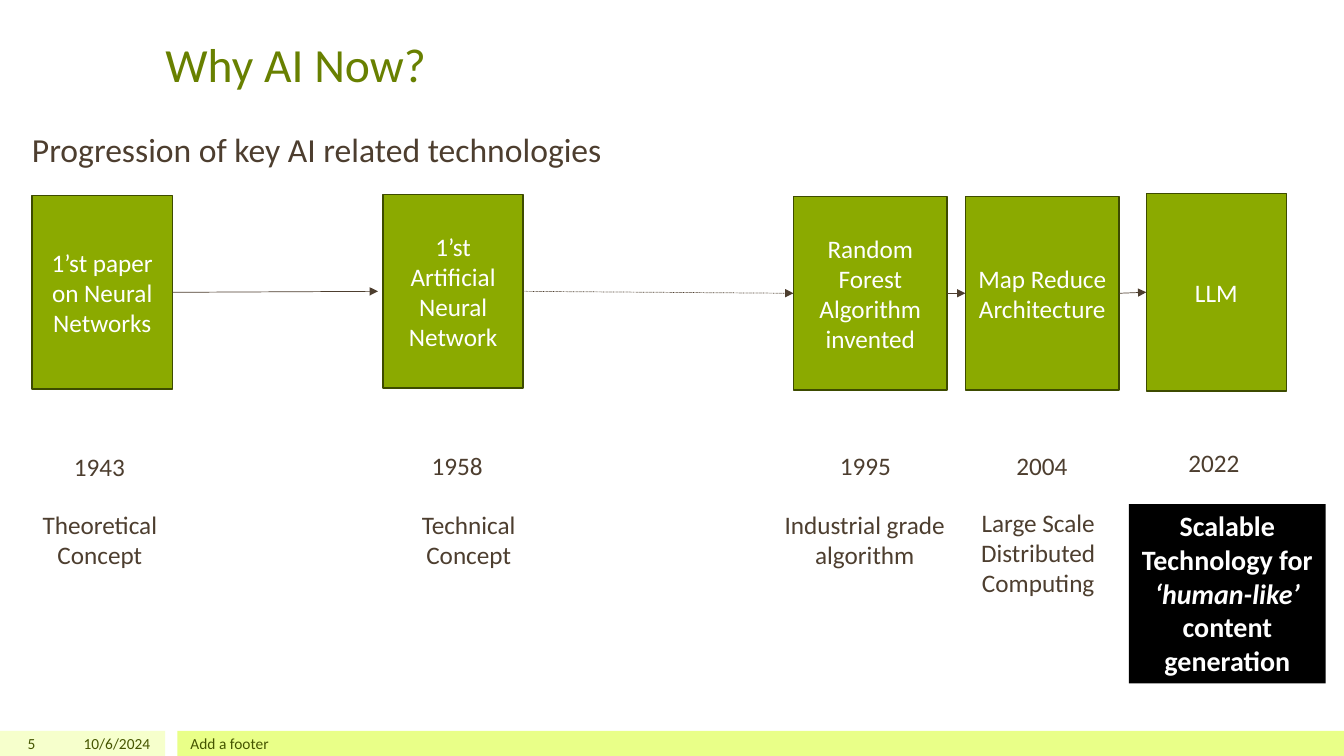
from pptx import Presentation
from pptx import util as u
from pptx.dml.color import RGBColor
from pptx.enum import dml, shapes, text
from pptx.oxml.ns import qn
from lxml import etree

COLORS = {
    "title": "688000", "body": "4D3E2F", "footer": "455500", "box": "8BAA00",
    "outline": "3D4B00", "white": "FFFFFF", "black": "000000",
    "pale": "F6FFCC", "lime": "E9FF88",
}
FONT = "Calibri"
SLIDE_WIDTH, SLIDE_HEIGHT = 960, 540
BAR_TOP, BAR_HEIGHT = 522, 18
YEAR_SIZE = (58.3, 29)
CAPTION_WIDTH = 138.2

TITLE = "Why AI Now?"
SUBTITLE = "Progression of key AI related technologies"
BARS = [(0, 118, "pale"), (126.7, 833.3, "lime")]
FOOTERS = [
    ("5", 0, 32.4, "RIGHT"),
    ("10/6/2024", 36, 78.5, "RIGHT"),
    ("Add a footer", 129, 720, "LEFT"),
]
MILESTONES = [
    {"name": "1’st paper on Neural Networks", "box": (23, 139.7, 100.1, 138.2),
     "year": ("1943", 41.8, 319), "caption": ("Theoretical Concept", 2.2, 360, 51)},
    {"name": "1’st Artificial Neural Network", "box": (273.6, 139, 100.1, 138.2),
     "year": ("1958", 297.4, 318.2), "caption": ("Technical Concept", 265.7, 360, 51)},
    {"name": "Random Forest Algorithm invented", "box": (566.8, 140.4, 109.8, 138.2),
     "year": ("1995", 589, 318.2), "caption": ("Industrial grade algorithm", 548.6, 360, 51)},
    {"name": "Map Reduce Architecture", "box": (689.6, 140.4, 109.8, 138.2),
     "year": ("2004", 715, 318.2),
     "caption": ("Large Scale Distributed Computing", 672.5, 358.6, 72.7)},
    {"name": "LLM", "box": (818.8, 138.2, 100.1, 141.1),
     "year": ("2022", 838, 316), "caption": None},
]
HIGHLIGHT = [("Scalable Technology for ", False), ("‘human-like’", True),
             (" content generation", False)]
HIGHLIGHT_BOX = (806.4, 360, 140.6, 128.2)
ARROWS = [(3.6, None), (0, dml.MSO_LINE.ROUND_DOT), (0, None), (0, None)]


def color(name):
    return RGBColor.from_string(COLORS[name])


def points(*values):
    return [u.Pt(value) for value in values]


def write(shape, runs, size, color_name, align="CENTER", anchor="TOP", bold=False):
    frame = shape.text_frame
    frame.word_wrap = True
    frame.vertical_anchor = text.MSO_ANCHOR[anchor]
    paragraph = frame.paragraphs[0]
    paragraph.alignment = text.PP_ALIGN[align]
    font = paragraph.font
    font.name, font.size, font.bold = FONT, u.Pt(size), bold
    font.color.rgb = color(color_name)
    for content, italic in runs:
        run = paragraph.add_run()
        run.text = content
        if italic:
            run.font.italic = True


def add_text(slide, content, box, size, color_name, **style):
    shape = slide.shapes.add_textbox(*points(*box))
    write(shape, [(content, False)], size, color_name, **style)


def add_rectangle(slide, box, fill, outline=None):
    shape = slide.shapes.add_shape(shapes.MSO_SHAPE.RECTANGLE, *points(*box))
    shape.shadow.inherit = False
    shape.fill.solid()
    shape.fill.fore_color.rgb = color(fill)
    if outline:
        shape.line.color.rgb = color(outline)
        shape.line.width = u.Pt(1)
    else:
        shape.line.fill.background()
    return shape


def add_arrow(slide, start, end, gap, dash):
    left, top, width, height = start
    next_left, next_top, _, next_height = end
    arrow = slide.shapes.add_connector(
        shapes.MSO_CONNECTOR.STRAIGHT,
        *points(left + width, top + height / 2,
                next_left - gap, next_top + next_height / 2))
    arrow.line.color.rgb = color("body")
    arrow.line.width = u.Pt(0.5)
    if dash:
        arrow.line.dash_style = dash
    etree.SubElement(arrow.line._get_or_add_ln(), qn("a:tailEnd"), type="triangle")
    etree.SubElement(arrow._element.spPr, qn("a:effectLst"))


def build():
    presentation = Presentation()
    presentation.slide_width, presentation.slide_height = points(SLIDE_WIDTH, SLIDE_HEIGHT)
    slide = presentation.slides.add_slide(presentation.slide_layouts[5])

    for left, width, fill in BARS:
        add_rectangle(slide, (left, BAR_TOP, width, BAR_HEIGHT), fill)
    for content, left, width, align in FOOTERS:
        add_text(slide, content, (left, BAR_TOP, width, BAR_HEIGHT), 11, "footer",
                 align=align, anchor="MIDDLE")

    title = slide.shapes.title
    title.left, title.top, title.width, title.height = points(111, 21.6, 738, 92.9)
    write(title, [(TITLE, False)], 34, "title", align="LEFT")
    add_text(slide, SUBTITLE, (15.8, 88.6, 584, 36), 24, "body", align="LEFT")

    for milestone in MILESTONES:
        box = add_rectangle(slide, milestone["box"], "box", "outline")
        write(box, [(milestone["name"], False)], 18, "white", anchor="MIDDLE")
        year, left, top = milestone["year"]
        add_text(slide, year, (left, top, *YEAR_SIZE), 18, "body")
        if milestone["caption"]:
            caption, left, top, height = milestone["caption"]
            add_text(slide, caption, (left, top, CAPTION_WIDTH, height), 18, "body")

    for start, end, (gap, dash) in zip(MILESTONES, MILESTONES[1:], ARROWS):
        add_arrow(slide, start["box"], end["box"], gap, dash)

    highlight = add_rectangle(slide, HIGHLIGHT_BOX, "black")
    write(highlight, HIGHLIGHT, 20, "white", bold=True)
    presentation.save("out.pptx")


if __name__ == "__main__":
    build()
